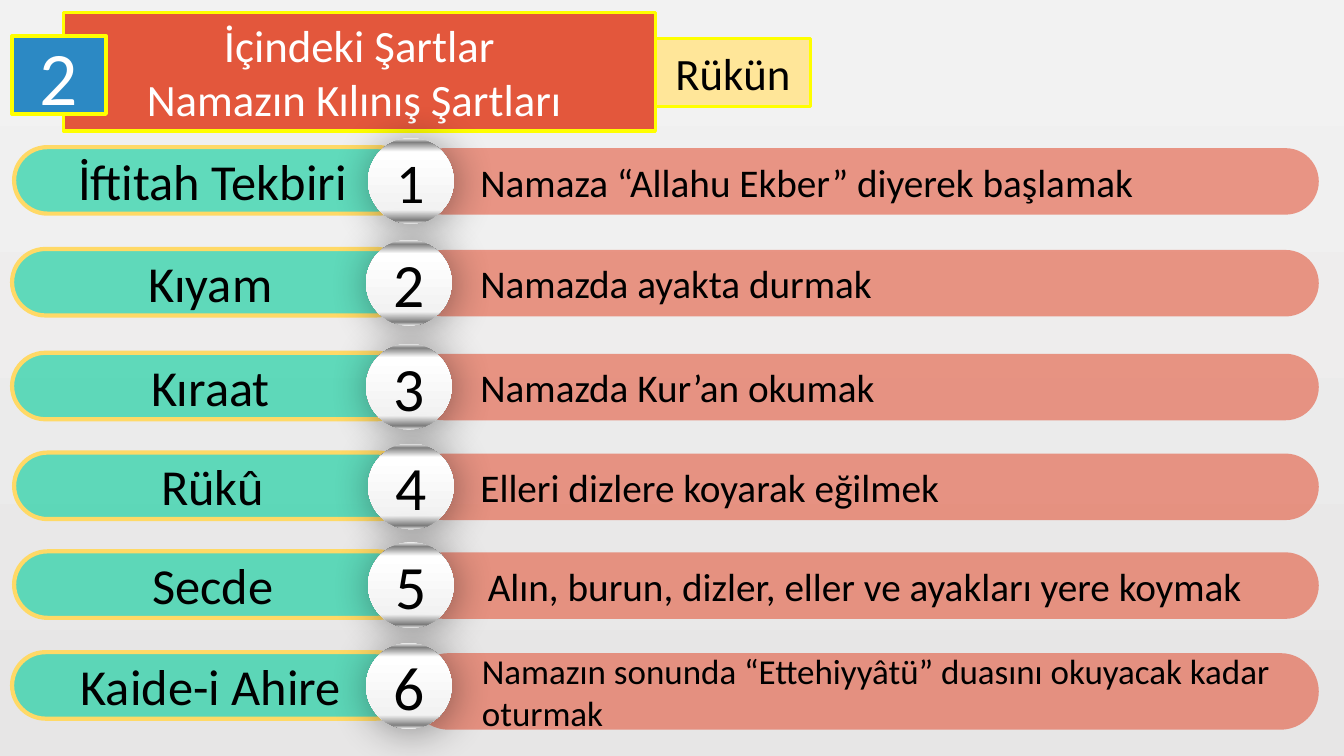
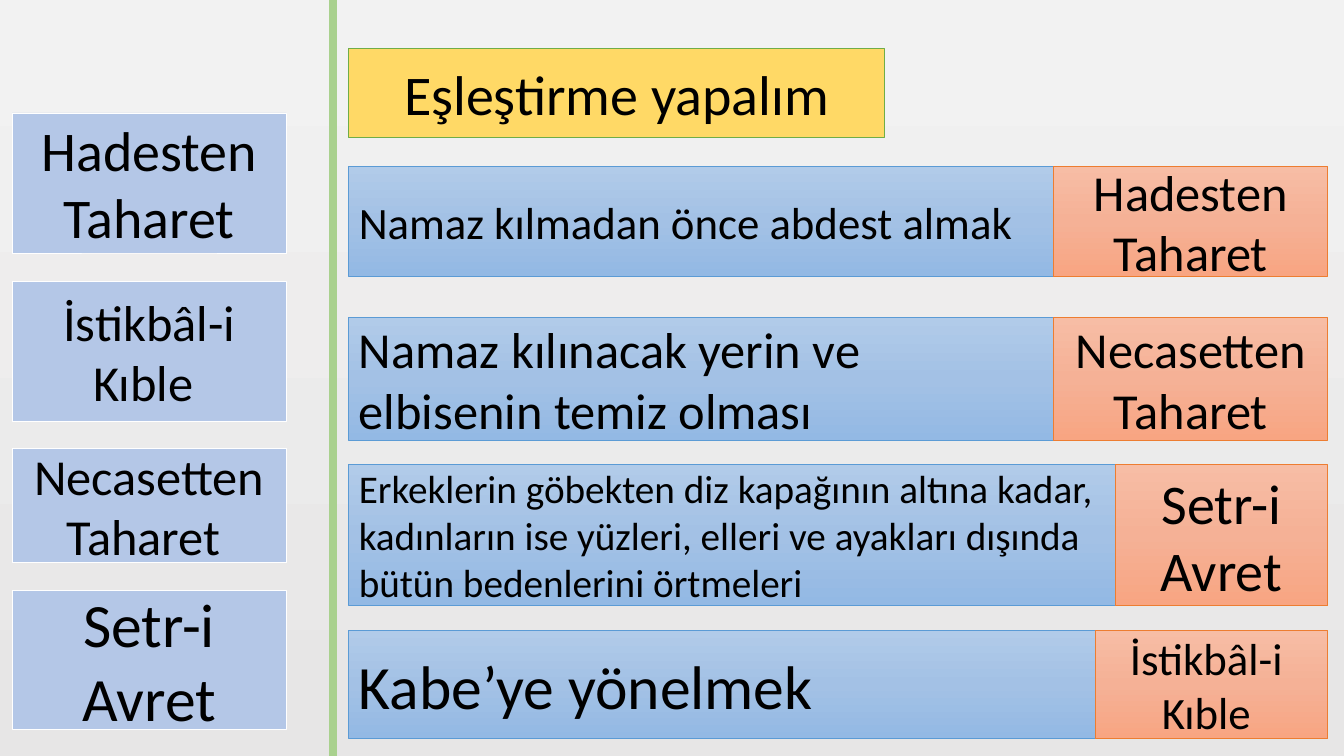
from lxml import etree
from pptx import Presentation
from pptx.dml import color
from pptx.enum import shapes, text
from pptx.oxml import ns
from pptx.util import Inches, Pt

FONT = "Calibri"
COLORS = {
    "black": "000000", "white": "FFFFFF", "yellow": "FFFF00", "gold": "FFD966",
    "cream": "FFE699", "red": "E3573C", "teal": "00CC99", "blue": "2C89C4",
    "lavender": "B4C7E7", "sky": "5B9BD5", "orange": "ED7D31",
    "green": "70AD47", "light_green": "A9D18E",
}
GRADIENTS = {
    "backdrop": [(0, "F2F2F2"), (100, "E7E6E6")],
    "metal": [(0, "F2F2F2"), (5, "808080"), (16, "FFFFFF"),
              (84, "F2F2F2"), (96, "808080"), (100, "F2F2F2")],
    "sky": [(0, "B1CBE9"), (50, "A3C1E5"), (100, "93B9E4")],
    "peach": [(0, "F7BDA5"), (50, "F5B196"), (100, "F8A582")],
}
RECT = shapes.MSO_SHAPE.RECTANGLE
PILL = shapes.MSO_SHAPE.ROUNDED_RECTANGLE
CIRCLE = shapes.MSO_SHAPE.OVAL
LEFT, CENTER = text.PP_ALIGN.LEFT, text.PP_ALIGN.CENTER

PILLARS = [
    (0.14, 1.46, "İftitah Tekbiri", "Namaza “Allahu Ekber” diyerek başlamak"),
    (0.12, 2.47, "Kıyam", "Namazda ayakta durmak"),
    (0.12, 3.5, "Kıraat", "Namazda Kur’an okumak"),
    (0.14, 4.49, "Rükû", "Elleri dizlere koyarak eğilmek"),
    (0.14, 5.47, "Secde", "Alın, burun, dizler, eller ve ayakları yere koymak"),
    (0.12, 6.47, "Kaide-i Ahire",
     "Namazın sonunda “Ettehiyyâtü” duasını okuyacak kadar oturmak"),
]
TERMS = [
    (1.12, 1.39, "Hadesten Taharet", 40),
    (2.79, 1.39, "İstikbâl-i Kıble ", 36),
    (4.45, 1.13, "Necasetten Taharet ", 36),
    (5.86, 1.38, "Setr-i Avret", 44),
]
MATCHES = [
    (1.65, 1.09, "Namaz kılmadan önce abdest almak", 32,
     10.45, "Hadesten Taharet", 36),
    (3.15, 1.22, "Namaz kılınacak yerin ve\velbisenin temiz olması", 36,
     10.45, "Necasetten\nTaharet", 36),
    (4.61, 1.4, "Erkeklerin göbekten diz kapağının altına kadar, kadınların ise "
     "yüzleri, elleri ve ayakları dışında\nbütün bedenlerini örtmeleri", 28,
     11.06, "Setr-i Avret", 40),
    (6.25, 1.08, "Kabe’ye yönelmek", 44, 10.86, "İstikbâl-i \nKıble ", 32),
]


def rgb(name):
    return color.RGBColor.from_string(COLORS[name])


def paint_gradient(owner, fill, name):
    fill.gradient()
    fill.gradient_angle = 270
    stops = owner._element.find(".//" + ns.qn("a:gsLst"))
    for stop in list(stops):
        stops.remove(stop)
    for position, value in GRADIENTS[name]:
        stop = etree.SubElement(stops, ns.qn("a:gs"), pos=str(position * 1000))
        etree.SubElement(stop, ns.qn("a:srgbClr"), val=value)


def paint(shape, fill, line=None, width=0.5, opacity=100):
    if fill in COLORS:
        shape.fill.solid()
        shape.fill.fore_color.rgb = rgb(fill)
        if opacity < 100:
            tint = shape._element.spPr.find(
                ns.qn("a:solidFill") + "/" + ns.qn("a:srgbClr"))
            etree.SubElement(tint, ns.qn("a:alpha"), val=str(opacity * 1000))
    else:
        paint_gradient(shape, shape.fill, fill[9:])
    if line:
        shape.line.color.rgb = rgb(line)
        shape.line.width = Pt(width)
    else:
        shape.line.fill.background()
    shape.shadow.inherit = False


def write(shape, words, size, ink="black", align=CENTER, level=0):
    frame = shape.text_frame
    frame.text = words
    frame.word_wrap = True
    frame.auto_size = text.MSO_AUTO_SIZE.NONE
    frame.vertical_anchor = text.MSO_ANCHOR.MIDDLE
    for para in frame.paragraphs:
        para.alignment = align
        para.level = level
        for span in para.runs:
            span.font.name = FONT
            span.font.size = Pt(size)
            span.font.color.rgb = rgb(ink)


def add_box(page, kind, place, fill, line=None, width=0.5, opacity=100):
    shape = page.shapes.add_shape(kind, *map(Inches, place))
    if kind == PILL:
        shape.adjustments[0] = 0.5
    paint(shape, fill, line, width, opacity)
    return shape


def add_title(page, place, words, size, ink, fill, line, width):
    title = page.shapes.title
    title.left, title.top, title.width, title.height = map(Inches, place)
    paint(title, fill, line, width)
    write(title, words, size, ink)


def add_soft_shadow(shape):
    effects = shape._element.spPr.find(ns.qn("a:effectLst"))
    shadow = etree.SubElement(
        effects, ns.qn("a:outerShdw"), blurRad=str(Pt(30)), dist=str(Pt(3)),
        dir="2700000", algn="tl", rotWithShape="0")
    tint = etree.SubElement(shadow, ns.qn("a:srgbClr"), val=COLORS["black"])
    etree.SubElement(tint, ns.qn("a:alpha"), val="40000")


def add_pillar(page, left, top, number, name, meaning):
    last = number == len(PILLARS)
    label = add_box(page, PILL, (left, top, 3.94, 0.66), "teal", "gold", 3, 60)
    write(label, name, 36)
    bar = add_box(page, PILL, (4.07, top + 0.01, 9.01, 0.76 if last else 0.66),
                  "red", opacity=60)
    if number == 5:
        write(bar, meaning, 28)
    else:
        write(bar, meaning, 25 if last else 28, align=LEFT, level=1)
    disc = add_box(page, CIRCLE, (left + 3.51, top - 0.09, 0.85, 0.85),
                   "gradient:metal")
    add_soft_shadow(disc)
    write(disc, str(number), 40 if number == 1 else 44)


def add_match(page, top, height, meaning, size, split, answer, answer_size):
    bar = add_box(page, RECT, (3.46, top, 9.09, height), "gradient:sky", "sky")
    write(bar, meaning, size, align=LEFT)
    tag = add_box(page, RECT, (split, top, 13.17 - split, height),
                  "gradient:peach", "orange")
    write(tag, answer, answer_size)


def build_pillars(page):
    add_title(page, (0.63, 0.12, 5.87, 1.18),
              "İçindeki Şartlar\nNamazın Kılınış Şartları ", 32,
              "white", "red", "yellow", 2.25)
    badge = add_box(page, RECT, (0.12, 0.36, 0.93, 0.77), "blue", "yellow", 3)
    write(badge, "2", 54, "white")
    tag = add_box(page, RECT, (6.5, 0.38, 1.54, 0.68), "cream", "yellow", 2.25)
    write(tag, "Rükün", 32)
    for number, (left, top, name, meaning) in enumerate(PILLARS, 1):
        add_pillar(page, left, top, number, name, meaning)


def build_matching(page):
    add_title(page, (3.46, 0.48, 5.31, 0.88), "Eşleştirme yapalım", 40,
              "black", "gold", "green", 0.5)
    for top, height, name, size in TERMS:
        term = add_box(page, RECT, (0.12, top, 2.72, height), "lavender", "white")
        write(term, name, size)
    for match in MATCHES:
        add_match(page, *match)
    divider = page.shapes.add_connector(
        shapes.MSO_CONNECTOR.STRAIGHT, Inches(3.3), 0, Inches(3.3), Inches(7.5))
    divider.line.color.rgb = rgb("light_green")
    divider.line.width = Pt(6)
    etree.SubElement(divider._element.spPr, ns.qn("a:effectLst"))


def main():
    deck = Presentation()
    deck.slide_width, deck.slide_height = Inches(13.33), Inches(7.5)
    master = deck.slide_master
    paint_gradient(master, master.background.fill, "backdrop")
    for build in (build_pillars, build_matching):
        build(deck.slides.add_slide(deck.slide_layouts[5]))
    deck.save("out.pptx")


if __name__ == "__main__":
    main()
